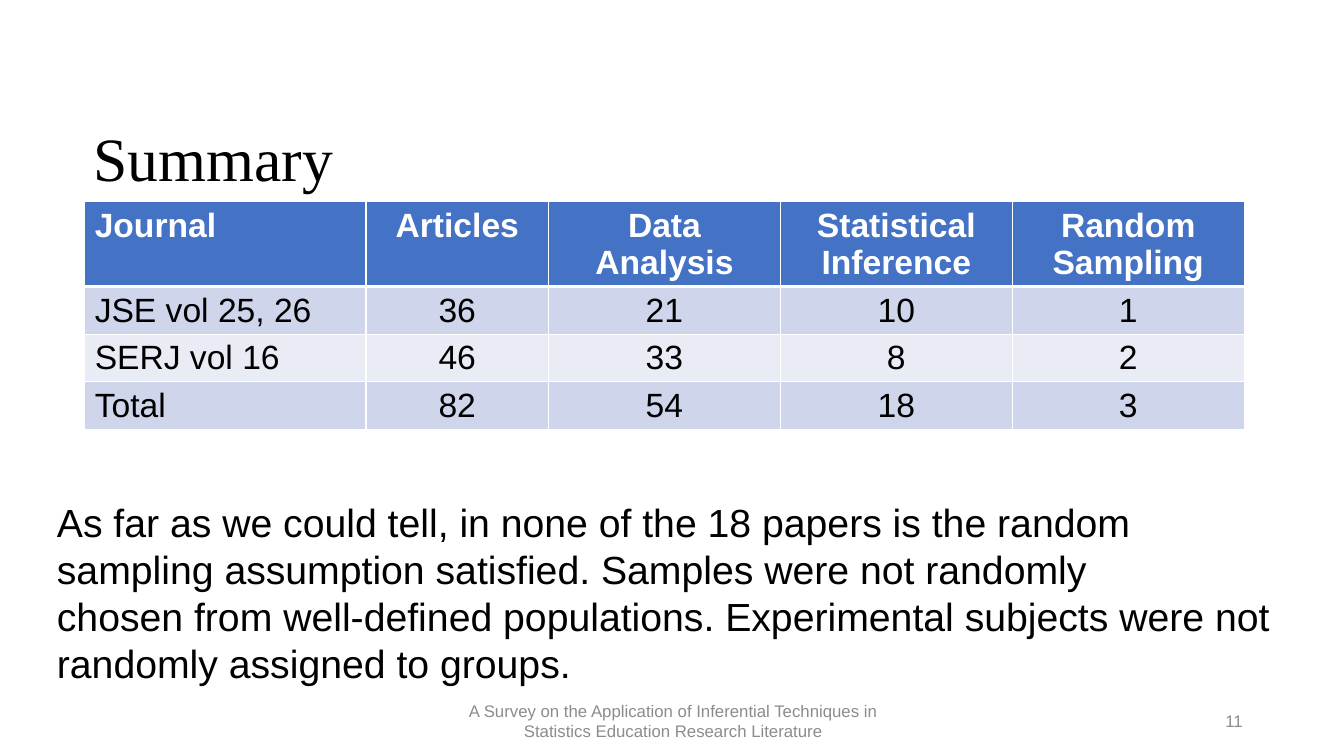
from lxml.etree import SubElement
from pptx import Presentation
from pptx.dml.color import RGBColor
from pptx.enum.text import MSO_ANCHOR, MSO_AUTO_SIZE, PP_ALIGN
from pptx.oxml.ns import qn
from pptx.util import Inches, Pt

WIDTH, HEIGHT = 13.33, 7.5
BLACK, WHITE, GREY = "000000", "FFFFFF", "8C8C8C"
HEADER_BLUE, BANDS = "4472C4", ("CFD5EA", "E9EBF5")

JOURNAL_COUNTS = [
    ("Journal", "Articles", "Data Analysis", "Statistical Inference", "Random Sampling"),
    ("JSE vol 25, 26", "36", "21", "10", "1"),
    ("SERJ vol 16", "46", "33", "8", "2"),
    ("Total", "82", "54", "18", "3"),
]
COLUMN_WIDTHS = (2.79, 1.81, 2.3, 2.3, 2.3)
ROW_HEIGHTS = (0.84, 0.47, 0.47, 0.47)

FINDINGS = (
    "As far as we could tell, in none of the 18 papers is the random",
    "sampling assumption satisfied. Samples were not randomly",
    "chosen from well-defined populations. Experimental subjects were not",
    "randomly assigned to groups.",
)
FOOTER = ("A Survey on the Application of Inferential Techniques in "
          "Statistics Education Research Literature")


def color(hex_string):
    return RGBColor.from_string(hex_string)


def write(frame, lines, size, ink=BLACK, align=PP_ALIGN.LEFT, font="Arial", bold=False):
    """Put each line in its own paragraph of the frame."""
    for index, line in enumerate(lines):
        paragraph = frame.paragraphs[0] if index == 0 else frame.add_paragraph()
        paragraph.alignment = align
        run = paragraph.add_run()
        run.text = line
        run.font.size = Pt(size)
        run.font.name = font
        run.font.bold = bold
        run.font.color.rgb = color(ink)


def place(shape, left, top, width, height):
    """Position a shape by shares of the slide's size."""
    shape.left, shape.width = Inches(left * WIDTH), Inches(width * WIDTH)
    shape.top, shape.height = Inches(top * HEIGHT), Inches(height * HEIGHT)


def add_title(slide, text):
    title = slide.shapes.title
    place(title, 0.062, 0.149, 0.443, 0.129)
    frame = title.text_frame
    frame.auto_size = MSO_AUTO_SIZE.NONE
    frame.vertical_anchor = MSO_ANCHOR.MIDDLE
    write(frame, [text], 44, font="Times New Roman")
    frame.paragraphs[0].line_spacing = 0.9


def add_text(slide, box, lines, size, wrap=True, anchor=MSO_ANCHOR.TOP, **style):
    text_box = slide.shapes.add_textbox(0, 0, 0, 0)
    place(text_box, *box)
    frame = text_box.text_frame
    frame.word_wrap = wrap
    frame.vertical_anchor = anchor
    write(frame, lines, size, **style)


def border_cell(cell, bottom_width):
    """Draw white borders; they must precede the cell's fill in the XML."""
    properties = cell._tc.get_or_add_tcPr()
    for side in ("lnL", "lnR", "lnT", "lnB"):
        width = bottom_width if side == "lnB" else 1
        line = SubElement(properties, qn(f"a:{side}"), w=str(Pt(width)))
        SubElement(SubElement(line, qn("a:solidFill")), qn("a:srgbClr"), val=WHITE)


def add_journal_table(slide):
    frame = slide.shapes.add_table(
        len(ROW_HEIGHTS), len(COLUMN_WIDTHS), Inches(0.84), Inches(2),
        Inches(sum(COLUMN_WIDTHS)), Inches(sum(ROW_HEIGHTS)))
    table = frame.table
    for column, width in zip(table.columns, COLUMN_WIDTHS):
        column.width = Inches(width)
    for row, height in zip(table.rows, ROW_HEIGHTS):
        row.height = Inches(height)
    for r, counts in enumerate(JOURNAL_COUNTS):
        header = r == 0
        for c, text in enumerate(counts):
            cell = table.cell(r, c)
            border_cell(cell, 3 if header else 1)
            cell.fill.solid()
            cell.fill.fore_color.rgb = color(HEADER_BLUE if header else BANDS[(r - 1) % 2])
            write(cell.text_frame, [text], 24, ink=WHITE if header else BLACK,
                  align=PP_ALIGN.CENTER if c else PP_ALIGN.LEFT, bold=header)


def main():
    presentation = Presentation()
    presentation.slide_width, presentation.slide_height = Inches(WIDTH), Inches(HEIGHT)
    slide = presentation.slides.add_slide(presentation.slide_layouts.get_by_name("Title Only"))
    add_title(slide, "Summary")
    add_journal_table(slide)
    add_text(slide, (0.332, 0.927, 0.338, 0.053), [FOOTER], 12,
             anchor=MSO_ANCHOR.MIDDLE, ink=GREY, align=PP_ALIGN.CENTER)
    add_text(slide, (0.707, 0.927, 0.225, 0.053), ["11"], 12,
             anchor=MSO_ANCHOR.MIDDLE, ink=GREY, align=PP_ALIGN.RIGHT)
    add_text(slide, (0.035, 0.652, 0.929, 0.328), FINDINGS, 28, wrap=False)
    presentation.save("out.pptx")


if __name__ == "__main__":
    main()
